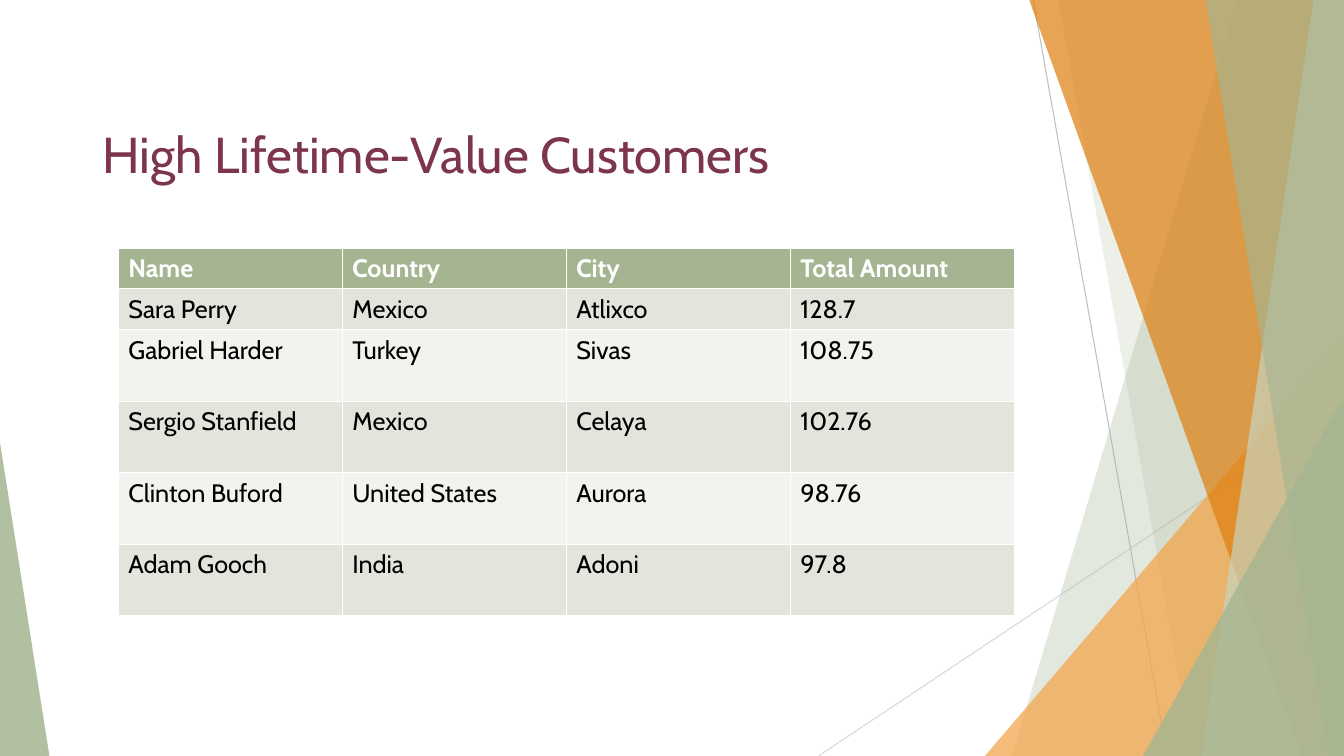
import dataclasses

import lxml.etree
import pptx
import pptx.dml.color
import pptx.enum.shapes
import pptx.enum.text
import pptx.oxml.ns
import pptx.util


@dataclasses.dataclass(frozen=True)
class Theme:
    font: str = "Cabin"
    title_size: int = 36
    table_size: int = 18
    title: str = "7C354D"
    text: str = "000000"
    white: str = "FFFFFF"
    green: str = "A5B592"
    pale_green: str = "C9D3BE"
    orange: str = "F3A447"
    dark_orange: str = "DD7E0E"
    row_fills: tuple = ("E1E5DC", "F0F3EE")
    dark_line: str = "BFBFBF"
    light_line: str = "D9D9D9"
    line_width: float = 0.75


@dataclasses.dataclass(frozen=True)
class Box:
    left: int
    top: int
    width: int
    height: int

    def point(self, x, y):
        """Position at x and y percent of the box."""
        return (round(self.left + self.width * x / 100),
                round(self.top + self.height * y / 100))

    def inner(self, left, top, width, height):
        """Inner box given in percent of this one."""
        return Box(*self.point(left, top),
                   round(self.width * width / 100),
                   round(self.height * height / 100))

    def place(self):
        return self.left, self.top, self.width, self.height


THEME = Theme()

CUSTOMERS = [
    ("Name", "Country", "City", "Total Amount"),
    ("Sara Perry", "Mexico", "Atlixco", "128.7"),
    ("Gabriel Harder", "Turkey", "Sivas", "108.75"),
    ("Sergio Stanfield", "Mexico", "Celaya", "102.76"),
    ("Clinton Buford", "United States", "Aurora", "98.76"),
    ("Adam Gooch", "India", "Adoni", "97.8"),
]
ROW_WEIGHTS = (4, 4, 7, 7, 7, 7)


def rgb(color):
    return pptx.dml.color.RGBColor.from_string(color)


def format_font(font, size, color, bold=False):
    values = {"name": THEME.font, "size": pptx.util.Pt(size), "bold": bold}
    for name, value in values.items():
        setattr(font, name, value)
    font.color.rgb = rgb(color)


def paint(shape, color, opacity):
    """Fill a shape without outline or shadow; opacity is in percent."""
    shape.shadow.inherit = False
    shape.fill.solid()
    shape.fill.fore_color.rgb = rgb(color)
    shape.line.fill.background()
    qn = pptx.oxml.ns.qn
    for color_element in shape.element.spPr.iter(qn("a:srgbClr")):
        lxml.etree.SubElement(color_element, qn("a:alpha"), val=str(opacity * 1000))


def add_line(slide, box, start, end, color):
    line = slide.shapes.add_connector(
        pptx.enum.shapes.MSO_CONNECTOR.STRAIGHT, *box.point(*start), *box.point(*end))
    line.line.color.rgb = rgb(color)
    line.line.width = pptx.util.Pt(THEME.line_width)
    lxml.etree.SubElement(line.element.spPr, pptx.oxml.ns.qn("a:effectLst"))


def add_band(slide, box, top_x, bottom_x, color, opacity):
    """Full-height band from a slanted left edge to the right side of the box."""
    builder = slide.shapes.build_freeform(*box.point(top_x, 0))
    corners = [(100, 0), (100, 100), (bottom_x, 100)]
    builder.add_line_segments([box.point(*corner) for corner in corners], close=True)
    paint(builder.convert_to_shape(), color, opacity)


def add_corner(slide, box, apex, color, opacity):
    """Triangle whose apex lies at the left (0) or right (1) end of its top."""
    triangle = slide.shapes.add_shape(
        pptx.enum.shapes.MSO_SHAPE.ISOSCELES_TRIANGLE, *box.place())
    triangle.adjustments[0] = apex
    paint(triangle, color, opacity)


def add_decoration(slide, box):
    add_line(slide, box, (76.88, 0), (86.85, 100), THEME.dark_line)
    add_line(slide, box, (100, 53.73), (60.9, 100), THEME.light_line)
    add_band(slide, box, 92.1, 75.3, THEME.green, 30)
    add_band(slide, box, 78.75, 88.73, THEME.green, 20)
    add_corner(slide, box.inner(73.28, 44.4, 26.72, 55.6), 1, THEME.orange, 72)
    add_band(slide, box, 76.58, 96.83, THEME.dark_orange, 70)
    add_band(slide, box, 97.73, 89.4, THEME.pale_green, 70)
    add_band(slide, box, 89.7, 98.85, THEME.green, 65)
    add_corner(slide, box.inner(85.05, 52.4, 14.95, 47.6), 1, THEME.green, 80)
    add_corner(slide, box.inner(0, 58.53, 3.68, 41.47), 0, THEME.green, 85)


def add_title(slide, box, text):
    title = slide.shapes.title
    for name, value in dataclasses.asdict(box).items():
        setattr(title, name, value)
    frame = title.text_frame
    frame.text = text
    values = {"word_wrap": True,
              "auto_size": pptx.enum.text.MSO_AUTO_SIZE.NONE,
              "vertical_anchor": pptx.enum.text.MSO_ANCHOR.TOP}
    for name, value in values.items():
        setattr(frame, name, value)
    paragraph = frame.paragraphs[0]
    paragraph.alignment = pptx.enum.text.PP_ALIGN.LEFT
    format_font(paragraph.runs[0].font, THEME.title_size, THEME.title)
    title.element.getparent().append(title.element)  # in front of the bands


def add_customer_table(slide, box):
    table = slide.shapes.add_table(
        len(CUSTOMERS), len(CUSTOMERS[0]), *box.place()).table
    for row_index, record in enumerate(CUSTOMERS):
        header = row_index == 0
        table.rows[row_index].height = round(
            box.height * ROW_WEIGHTS[row_index] / sum(ROW_WEIGHTS))
        fill = THEME.green if header else THEME.row_fills[(row_index - 1) % 2]
        color = THEME.white if header else THEME.text
        for column_index, text in enumerate(record):
            cell = table.cell(row_index, column_index)
            cell.text = text
            cell.fill.solid()
            cell.fill.fore_color.rgb = rgb(fill)
            font = cell.text_frame.paragraphs[0].runs[0].font
            format_font(font, THEME.table_size, color, bold=header)


def main():
    presentation = pptx.Presentation()
    presentation.slide_width = pptx.util.Inches(13.33)
    presentation.slide_height = pptx.util.Inches(7.5)
    page = Box(0, 0, presentation.slide_width, presentation.slide_height)
    slide = presentation.slides.add_slide(
        presentation.slide_layouts.get_by_name("Title Only"))
    add_decoration(slide, page)
    add_title(slide, page.inner(6.9, 15.6, 70.5, 19.2), "High Lifetime-Value Customers")
    add_customer_table(slide, page.inner(8.8, 32.8, 66.67, 48.67))
    presentation.save("out.pptx")


if __name__ == "__main__":
    main()
